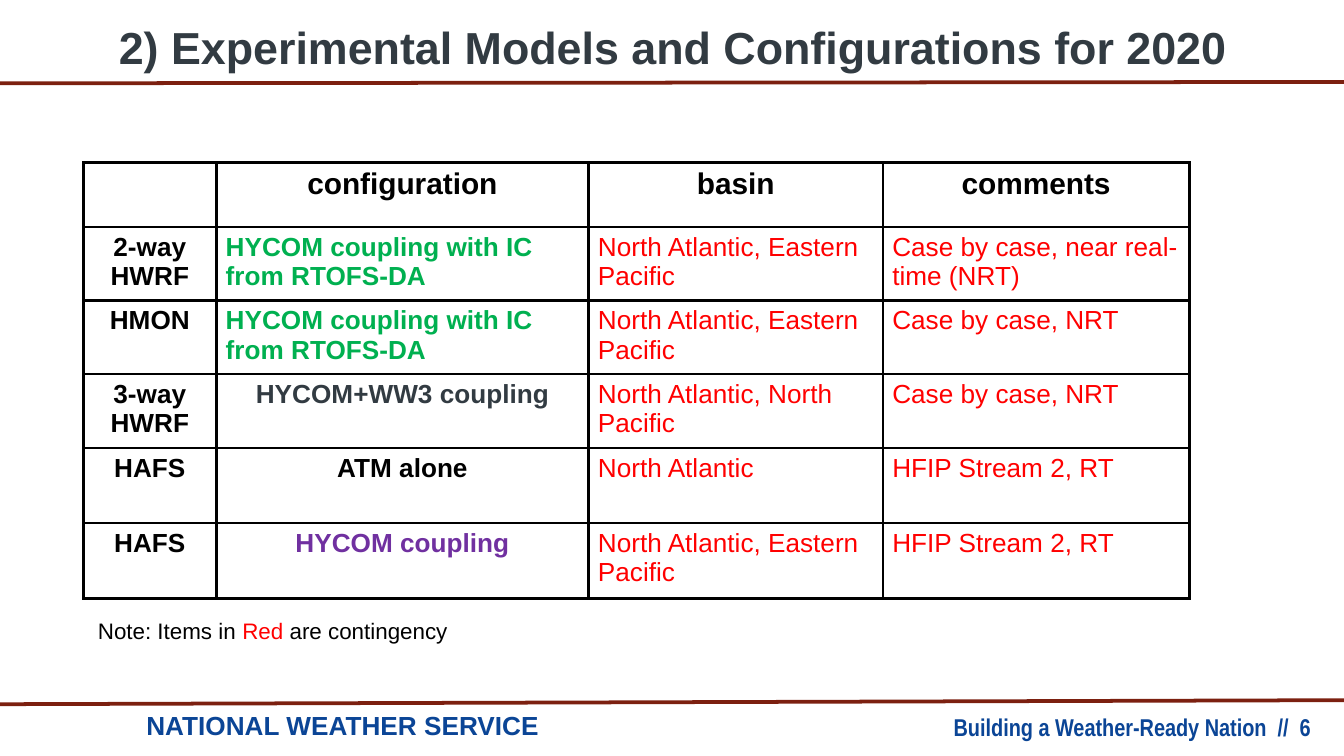
from lxml.etree import SubElement
from pptx import Presentation
from pptx.dml.color import RGBColor
from pptx.enum.shapes import MSO_CONNECTOR as Connector
from pptx.enum.text import MSO_ANCHOR as Anchor, PP_ALIGN as Align
from pptx.oxml import parse_xml
from pptx.oxml.ns import nsdecls, qn
from pptx.util import Inches, Pt

CELL = 0.1  # side of one grid square, in inches
COLUMNS, ROWS = 100, 56.25
BLACK, RED, GREEN, PURPLE = "000000", "FF0000", "00B050", "7030A0"
SLATE, NAVY, BRICK = "323B42", "0B4596", "7C2010"


def color(value):
    return RGBColor.from_string(value)


def grid(*lengths):
    return [Inches(round(length * CELL, 4)) for length in lengths]


class SlideBuilder:
    font = "Arial"

    def __init__(self, slide):
        self.slide = slide

    def style(self, para, size, ink, bold=False, align=Align.LEFT, font=None):
        para.alignment = align
        para.font.name = font or self.font
        para.font.size = Pt(size)
        para.font.bold = bold
        para.font.color.rgb = color(ink)

    def text(self, place, spans, size, ink, inset=(1, 1), anchor=Anchor.TOP, **look):
        """Write (words, colour) spans; a colour of None keeps the paragraph's."""
        frame = self.slide.shapes.add_textbox(*grid(*place)).text_frame
        frame.word_wrap = True
        frame.vertical_anchor = anchor
        side, top = grid(*inset)
        frame.margin_left = frame.margin_right = side
        frame.margin_top = frame.margin_bottom = top
        para = frame.paragraphs[0]
        self.style(para, size, ink, **look)
        for words, span_ink in spans:
            span = para.add_run()
            span.text = words
            if span_ink:
                span.font.color.rgb = color(span_ink)

    def rule(self, left_row, right_row):
        line = self.slide.shapes.add_connector(
            Connector.STRAIGHT, *grid(0, left_row, COLUMNS, right_row))
        line.line.color.rgb = color(BRICK)
        line.line.width = Pt(2)
        SubElement(line._element.spPr, qn("a:effectLst"))

    def border(self, cell):
        properties = cell._tc.get_or_add_tcPr()
        for index, side in enumerate(("lnL", "lnR", "lnT", "lnB")):
            properties.insert(index, parse_xml(
                f'<a:{side} {nsdecls("a")} w="{Pt(1.5)}"><a:solidFill>'
                f'<a:srgbClr val="{BLACK}"/></a:solidFill></a:{side}>'))

    def table(self, left, top, widths, heights, rows):
        """Each cell is (words, size, colour, bold, alignment)."""
        table = self.slide.shapes.add_table(
            len(heights), len(widths),
            *grid(left, top, sum(widths), sum(heights))).table
        for column, width in zip(table.columns, grid(*widths)):
            column.width = width
        for row, height, entries in zip(table.rows, grid(*heights), rows):
            row.height = height
            for cell, (words, size, *look) in zip(row.cells, entries):
                cell.margin_left, cell.margin_top = grid(0.7, 0.4)
                cell.margin_right, cell.margin_bottom = grid(0.7, 0.4)
                cell.text = words
                para = cell.text_frame.paragraphs[0]
                self.style(para, size, *look)
                # The paragraph mark would otherwise stretch the row
                SubElement(para._p, qn("a:endParaRPr"), sz=str(size * 100))
                cell.fill.background()
                self.border(cell)


def model_row(model, configuration, ink, align, basin, comment):
    return [(model, 14, BLACK, True, Align.CENTER),
            (configuration, 14, ink, True, align),
            (basin, 14, RED, False, Align.LEFT),
            (comment, 14, RED, False, Align.LEFT)]


def main():
    deck = Presentation()
    deck.slide_width, deck.slide_height = grid(COLUMNS, ROWS)
    page = SlideBuilder(deck.slides.add_slide(deck.slide_layouts[6]))

    # Footer
    page.text((18.3, 53, 79.2, 1.3), [("Building a Weather-Ready Nation  //  6", None)],
              13, NAVY, inset=(0, 0), bold=True, align=Align.RIGHT, font="Arial Narrow")
    page.text((9.9, 51.8, 43.5, 5.1), [("NATIONAL WEATHER SERVICE", None)],
              14, NAVY, bold=True)
    page.rule(52.4, 52.1)

    # Title
    page.text((5.1, 0.2, 89.9, 6.5),
              [("2) Experimental Models and Configurations for 2020", None)],
              24, SLATE, anchor=Anchor.MIDDLE, bold=True, align=Align.CENTER)
    page.rule(6.2, 6.1)

    # Models table
    header = [(words, 16, BLACK, True, Align.CENTER)
              for words in ("", "configuration", "basin", "comments")]
    ocean = ("HYCOM coupling with IC from RTOFS-DA", GREEN, Align.LEFT)
    two_basins = "North Atlantic, Eastern Pacific"
    case_by_case, stream = "Case by case, NRT", "HFIP Stream 2, RT"
    page.table(6.2, 12.1, (9.9, 27.7, 21.9, 22.8), (4.8, 5.1, 5.1, 5.5, 5.6, 5.6), [
        header,
        model_row("2-way HWRF", *ocean, two_basins, "Case by case, near real-time (NRT)"),
        model_row("HMON", *ocean, two_basins, case_by_case),
        model_row("3-way HWRF", "HYCOM+WW3 coupling", SLATE, Align.CENTER,
                  "North Atlantic, North Pacific", case_by_case),
        model_row("HAFS", "ATM alone", BLACK, Align.CENTER, "North Atlantic", stream),
        model_row("HAFS", "HYCOM coupling", PURPLE, Align.CENTER, two_basins, stream),
    ])

    # Note
    page.text((6.3, 45.4, 48.8, 3),
              [("Note: Items in ", None), ("Red", RED), (" are contingency", None)],
              12, BLACK, inset=(1, 0.5))

    deck.save("out.pptx")


if __name__ == "__main__":
    main()
